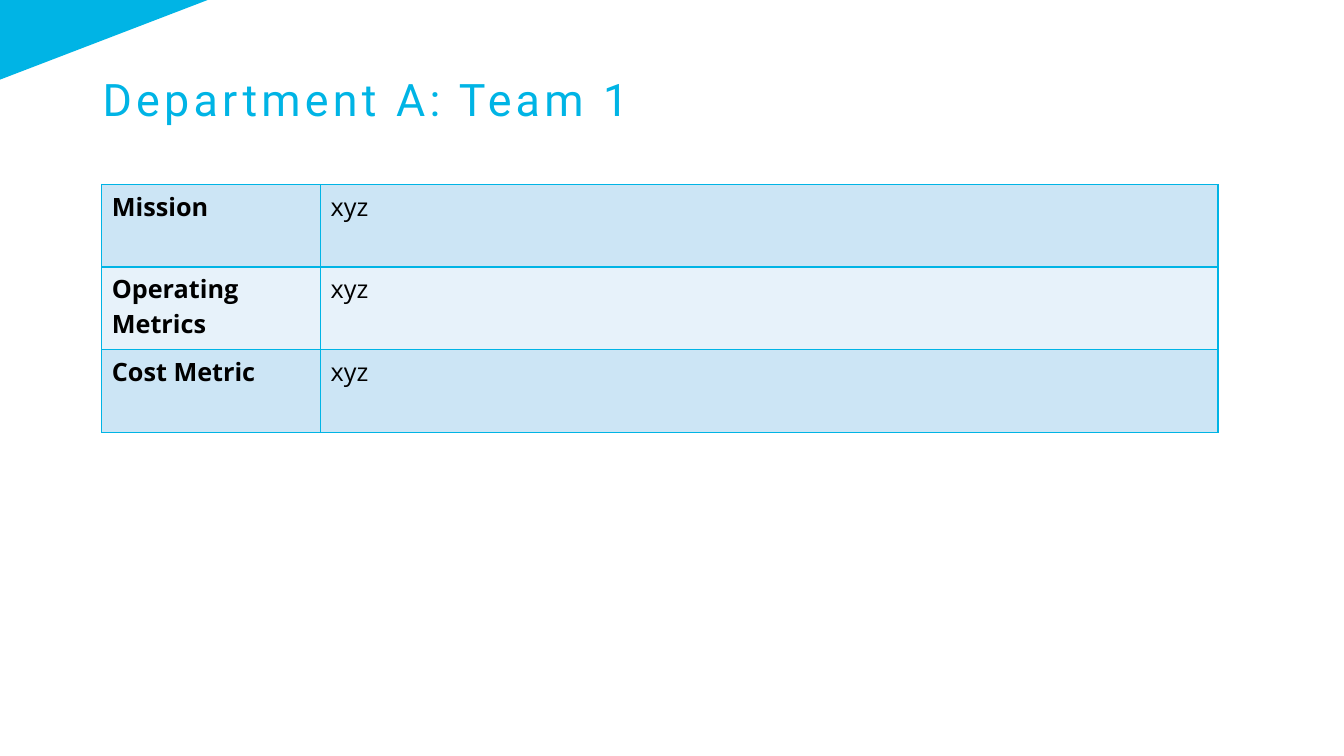
from lxml import etree
from pptx import Presentation
from pptx.dml.color import RGBColor
from pptx.enum.text import MSO_ANCHOR
from pptx.oxml.ns import qn
from pptx.util import Inches, Pt

TITLE = "Department A: Team 1"
ROWS = [
    ("Mission", "xyz"),
    ("Operating Metrics", "xyz"),
    ("Cost Metric", "xyz"),
]
COLUMN_WIDTHS = (2.17, 8.9)
ROW_HEIGHT = 0.82
TABLE_LEFT, TABLE_TOP = 1.01, 1.83
CORNER = [(0, 0), (2.06, 0), (0, 0.79)]
ACCENT, BLACK = "00B4E5", "000000"
BANDS = ("CCE5F5", "E7F2FA")
MIDDLE = MSO_ANCHOR.MIDDLE


def paint(fill, color):
    fill.solid()
    fill.fore_color.rgb = RGBColor.from_string(color)


def style(paragraph, name, size, color, bold=False):
    font = paragraph.font
    font.name, font.size, font.bold = name, Pt(size), bold
    paint(font.fill, color)


def add_borders(cell, color, width):
    properties = cell._tc.get_or_add_tcPr()
    for side in ("lnL", "lnR", "lnT", "lnB"):
        line = etree.SubElement(properties, qn(f"a:{side}"), w=str(Pt(width)))
        fill = etree.SubElement(line, qn("a:solidFill"))
        etree.SubElement(fill, qn("a:srgbClr"), val=color)


def add_corner(page):
    points = [(Inches(x), Inches(y)) for x, y in CORNER]
    builder = page.shapes.build_freeform(*points[0])
    builder.add_line_segments(points[1:])
    corner = builder.convert_to_shape()
    corner.shadow.inherit = False
    paint(corner.fill, ACCENT)
    corner.line.fill.background()


def add_title(page):
    box = page.shapes.add_textbox(Inches(0.92), Inches(0.29), Inches(11.5), Inches(1.45))
    frame = box.text_frame
    frame.word_wrap = True
    frame.vertical_anchor = MIDDLE
    para = frame.paragraphs[0]
    span = para.add_run()
    span.text = TITLE
    span._r.get_or_add_rPr().set("spc", "300")
    para.line_spacing = 0.9
    style(para, "Roboto", 32, ACCENT)


def add_metrics(page):
    table = page.shapes.add_table(
        len(ROWS), len(COLUMN_WIDTHS), Inches(TABLE_LEFT), Inches(TABLE_TOP),
        Inches(sum(COLUMN_WIDTHS)), Inches(ROW_HEIGHT * len(ROWS))).table
    table.first_row = False
    table.horz_banding = False
    for column, width in zip(table.columns, COLUMN_WIDTHS):
        column.width = Inches(width)
    for row_index, texts in enumerate(ROWS):
        table.rows[row_index].height = Inches(ROW_HEIGHT)
        for column_index, text in enumerate(texts):
            cell = table.cell(row_index, column_index)
            cell.text = text
            style(cell.text_frame.paragraphs[0], "Open Sans", 18, BLACK, column_index == 0)
            add_borders(cell, ACCENT, 1)
            paint(cell.fill, BANDS[row_index % len(BANDS)])


def main():
    deck = Presentation()
    deck.slide_width, deck.slide_height = Inches(13.33), Inches(7.5)
    page = deck.slides.add_slide(deck.slide_layouts[6])
    add_corner(page)
    add_title(page)
    add_metrics(page)
    deck.save("out.pptx")


if __name__ == "__main__":
    main()
